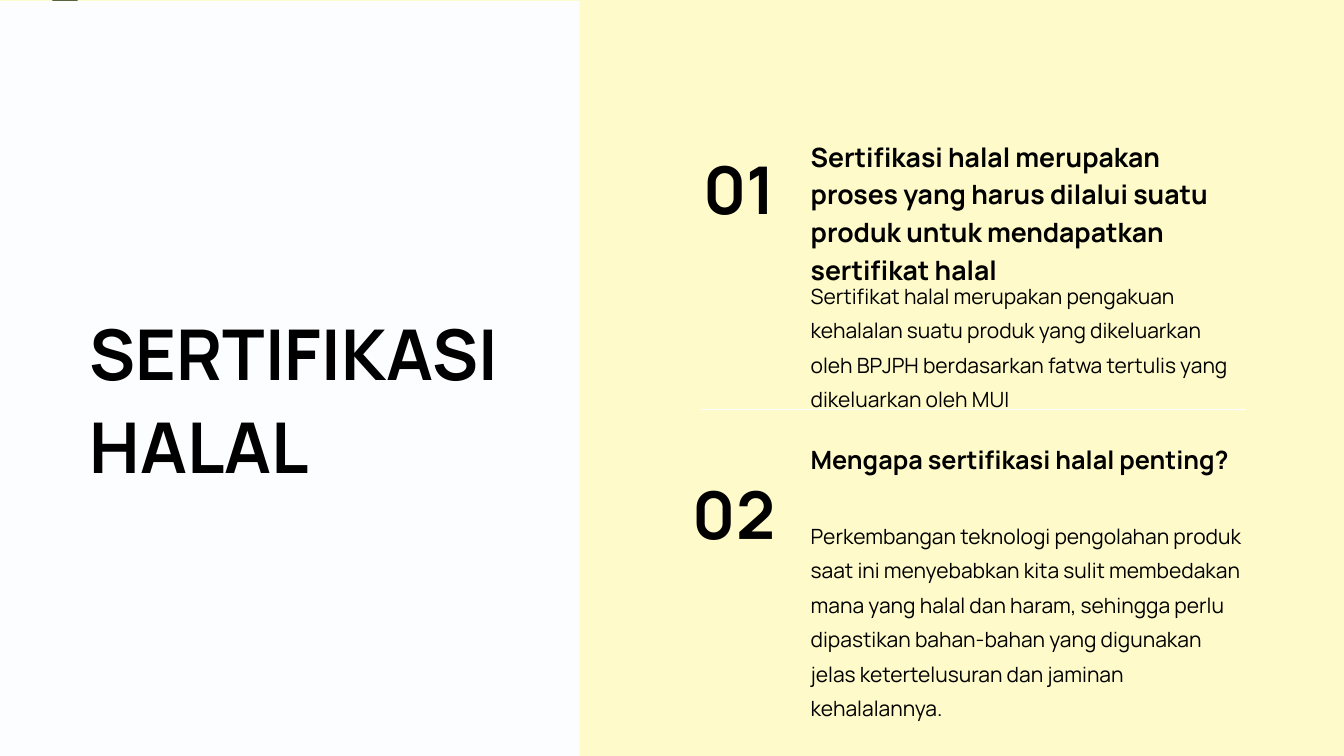
import pptx
import pptx.dml.color
import pptx.enum.shapes
import pptx.enum.text
import pptx.util

Inches = pptx.util.Inches
RGBColor = pptx.dml.color.RGBColor
PP_ALIGN = pptx.enum.text.PP_ALIGN

CREAM = RGBColor(0xFE, 0xFA, 0xC9)
OFF_WHITE = RGBColor(0xFB, 0xFD, 0xFF)
GREEN = RGBColor(0x44, 0x4D, 0x26)
BLACK = RGBColor(0, 0, 0)
FONT = "Manrope"

TITLE = "SERTIFIKASI HALAL"
# Blocks: (left, top, width, height), fill
BLOCKS = [
    ((0.52, 0, 0.25, 7.5), GREEN),
    ((6.95, 4.06, 5.41, 0.01), OFF_WHITE),
    ((0, 0.01, 5.75, 7.5), OFF_WHITE),
]
# Each text is (wording, top, height); headings add size and line spacing
SECTIONS = [
    {
        "number": ("01", 1.4),
        "heading": ("Sertifikasi halal merupakan proses yang harus dilalui suatu "
                    "produk untuk mendapatkan sertifikat halal", 1.34, 1.23, 19, 1.18),
        "body": ("Sertifikat halal merupakan pengakuan kehalalan suatu produk yang "
                 "dikeluarkan oleh BPJPH berdasarkan fatwa tertulis yang "
                 "dikeluarkan oleh MUI", 2.72, 1.18),
    },
    {
        "number": ("02", 4.63),
        "heading": ("Mengapa sertifikasi halal penting?", 4.35, 0.29, 18, 1.2),
        "body": ("Perkembangan teknologi pengolahan produk saat ini menyebabkan "
                 "kita sulit membedakan mana yang halal dan haram, sehingga perlu "
                 "dipastikan bahan-bahan yang digunakan jelas ketertelusuran dan "
                 "jaminan kehalalannya.", 5.1, 1.47),
    },
]
NUMBER_LEFT, NUMBER_WIDTH, NUMBER_HEIGHT = 6.67, 1.02, 0.72
TEXT_LEFT, TEXT_WIDTH = 8.04, 4.32


def write(shape, wording, size, spacing, bold=True, align=PP_ALIGN.LEFT):
    frame = shape.text_frame
    frame.text = wording
    frame.word_wrap = True
    frame.auto_size = pptx.enum.text.MSO_AUTO_SIZE.SHAPE_TO_FIT_TEXT
    frame.vertical_anchor = pptx.enum.text.MSO_ANCHOR.TOP
    frame.margin_left = frame.margin_right = 0
    frame.margin_top = frame.margin_bottom = 0
    paragraph = frame.paragraphs[0]
    paragraph.alignment = align
    paragraph.line_spacing = spacing
    paragraph.font.name = FONT
    paragraph.font.size = pptx.util.Pt(size)
    paragraph.font.bold = bold
    paragraph.font.color.rgb = BLACK


def add_text(slide, box, *args, **kwargs):
    write(slide.shapes.add_textbox(*map(Inches, box)), *args, **kwargs)


def add_block(slide, box, fill):
    block = slide.shapes.add_shape(
        pptx.enum.shapes.MSO_SHAPE.RECTANGLE, *map(Inches, box))
    block.shadow.inherit = False
    block.fill.solid()
    block.fill.fore_color.rgb = fill
    block.line.fill.background()


def main():
    deck = pptx.Presentation()
    deck.slide_width, deck.slide_height = Inches(13.33), Inches(7.5)
    slide = deck.slides.add_slide(deck.slide_layouts[5])
    slide.background.fill.solid()
    slide.background.fill.fore_color.rgb = CREAM

    for box, fill in BLOCKS:
        add_block(slide, box, fill)

    title = slide.shapes.title
    title.left, title.top, title.width, title.height = map(
        Inches, (0.89, 3, 4.51, 1.54))
    write(title, TITLE, 50, 1.1)
    # Bring the title in front of the white panel
    slide.shapes._spTree.append(title._element)

    for section in SECTIONS:
        wording, top, height, size, spacing = section["heading"]
        add_text(slide, (TEXT_LEFT, top, TEXT_WIDTH, height), wording, size, spacing)
        wording, top, height = section["body"]
        add_text(slide, (TEXT_LEFT, top, TEXT_WIDTH, height), wording, 15, 1.37,
                 bold=False)
        number, top = section["number"]
        add_text(slide, (NUMBER_LEFT, top, NUMBER_WIDTH, NUMBER_HEIGHT), number,
                 47, 1.09, align=PP_ALIGN.RIGHT)

    deck.save("out.pptx")


if __name__ == "__main__":
    main()
